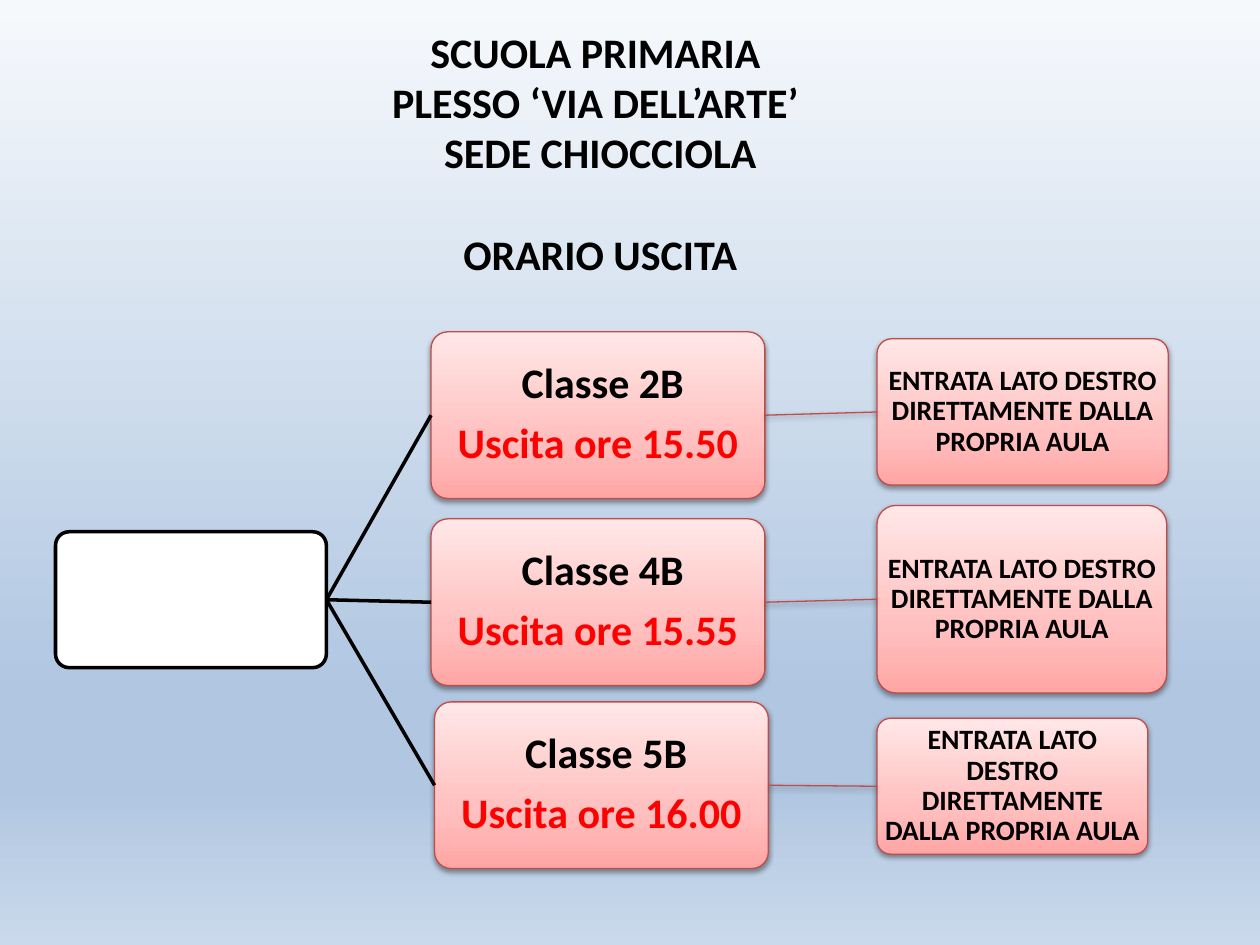
from lxml.etree import SubElement
from pptx import Presentation
from pptx.dml.color import RGBColor
from pptx.enum.shapes import MSO_CONNECTOR, MSO_SHAPE
from pptx.enum.text import MSO_ANCHOR, MSO_AUTO_SIZE, PP_ALIGN
from pptx.oxml.ns import qn
from pptx.util import Cm, Pt

COLOURS = {"black": "000000", "white": "FFFFFF", "red": "FF0000", "border": "BF4C48"}
SKY = [(0, "F6F9FC"), (74, "B0C6E1"), (83, "B0C6E1"), (100, "CAD9EB")]
ROSE = [(0, "FFA6A5"), (35, "FFC0BF"), (100, "FFE7E7")]

TITLE = ["SCUOLA PRIMARIA ", "PLESSO ‘VIA DELL’ARTE’ ", "SEDE CHIOCCIOLA", " ORARIO USCITA "]
EXIT_NOTE = "ENTRATA LATO DESTRO DIRETTAMENTE DALLA PROPRIA AULA"
EXIT_LEFT = 17.68
CLASS_SIZE = (6.73, 3.36)
# class, time, class left and top, note top, width and height (cm)
ROWS = [
    (" Classe 2B", "15.50", (8.69, 6.69), (6.83, 5.87, 2.95)),
    (" Classe 4B", "15.55", (8.69, 10.46), (10.19, 5.84, 3.78)),
    (" Classe 5B", "16.00", (8.76, 14.15), (14.48, 5.46, 2.74)),
]


def colour(name):
    return RGBColor.from_string(COLOURS[name])


def set_gradient(fill, element, stops, angle):
    fill.gradient()
    fill.gradient_angle = angle
    stop_list = next(element.iter(qn("a:gsLst")))
    for stop in list(stop_list):
        stop_list.remove(stop)
    for position, value in stops:
        stop = SubElement(stop_list, qn("a:gs"), pos=str(position * 1000))
        SubElement(stop, qn("a:srgbClr"), val=value)


def set_line(shape, name, width):
    shape.line.color.rgb = colour(name)
    shape.line.width = Pt(width)


def set_effects(shape, shadow):
    """Replace the theme effect with a soft shadow, or with none."""
    effects = SubElement(shape.element.spPr, qn("a:effectLst"))
    if shadow:
        outer = SubElement(effects, qn("a:outerShdw"), blurRad=str(Pt(3.1)), dist=str(Pt(1.6)),
                           dir="5400000", rotWithShape="0")
        tint = SubElement(outer, qn("a:srgbClr"), val=COLOURS["black"])
        SubElement(tint, qn("a:alpha"), val="38000")


def write_paragraph(para, text, size, name="black", **spacing):
    para.alignment = PP_ALIGN.CENTER
    for key, value in spacing.items():
        setattr(para, key, value)
    span = para.add_run()
    span.text = text
    span.font.color.rgb = colour(name)
    for key, value in {"name": "Calibri", "size": Pt(size), "bold": True}.items():
        setattr(span.font, key, value)


def format_frame(frame, **values):
    for key, value in values.items():
        setattr(frame, key, value)


def add_title(page, box):
    title = page.shapes.title
    title.left, title.top, title.width, title.height = map(Cm, box)
    frame = title.text_frame
    format_frame(frame, word_wrap=True, auto_size=MSO_AUTO_SIZE.NONE,
                 vertical_anchor=MSO_ANCHOR.TOP)
    for index, text in enumerate(TITLE):
        para = frame.add_paragraph() if index else frame.paragraphs[0]
        # The last line stands one line apart
        gap = Pt(29) if index == len(TITLE) - 1 else Pt(0)
        write_paragraph(para, text, 24, space_before=gap)


def add_rounded(page, box):
    shape = page.shapes.add_shape(MSO_SHAPE.ROUNDED_RECTANGLE, *map(Cm, box))
    shape.adjustments[0] = 0.1
    return shape


def add_root(page, box):
    root = add_rounded(page, box)
    root.fill.solid()
    root.fill.fore_color.rgb = colour("white")
    set_line(root, "black", 2)
    set_effects(root, False)
    return root


def add_card(page, box, lines, size, margin):
    card = add_rounded(page, box)
    set_gradient(card.fill, card.element, ROSE, 90)
    set_line(card, "border", 0.75)
    set_effects(card, True)
    frame = card.text_frame
    format_frame(frame, word_wrap=True, vertical_anchor=MSO_ANCHOR.MIDDLE,
                 **{f"margin_{side}": Cm(margin) for side in ("left", "top", "right", "bottom")})
    for index, (text, name) in enumerate(lines):
        para = frame.add_paragraph() if index else frame.paragraphs[0]
        gap = Pt(0.35 * size) if index < len(lines) - 1 else Pt(0)
        write_paragraph(para, text, size, name, line_spacing=0.9, space_after=gap)
    return card


def link(page, start, end, name, width, shadow):
    """Join the right side of one box to the left side of the next."""
    connector = page.shapes.add_connector(MSO_CONNECTOR.STRAIGHT, 0, 0, 0, 0)
    connector.begin_connect(start, 3)
    connector.end_connect(end, 1)
    set_line(connector, name, width)
    set_effects(connector, shadow)


def add_schedule(page, root_box):
    root = add_root(page, root_box)
    for class_name, time, corner, (top, width, height) in ROWS:
        lines = [(class_name, "black"), (f"Uscita ore {time}", "red")]
        class_card = add_card(page, corner + CLASS_SIZE, lines, 24, 0.05)
        note = add_card(page, (EXIT_LEFT, top, width, height), [(EXIT_NOTE, "black")], 16, 0.03)
        link(page, root, class_card, "black", 2, False)
        link(page, class_card, note, "border", 0.75, True)


def main():
    deck = Presentation()
    deck.slide_width, deck.slide_height = Cm(25.4), Cm(19.05)
    page = deck.slides.add_slide(deck.slide_layouts[5])
    set_gradient(page.background.fill, page.element, SKY, 270)
    add_title(page, (1.1, 0.4, 22, 5.38))
    add_schedule(page, (1.12, 10.72, 5.46, 2.74))
    deck.save("out.pptx")


if __name__ == "__main__":
    main()
